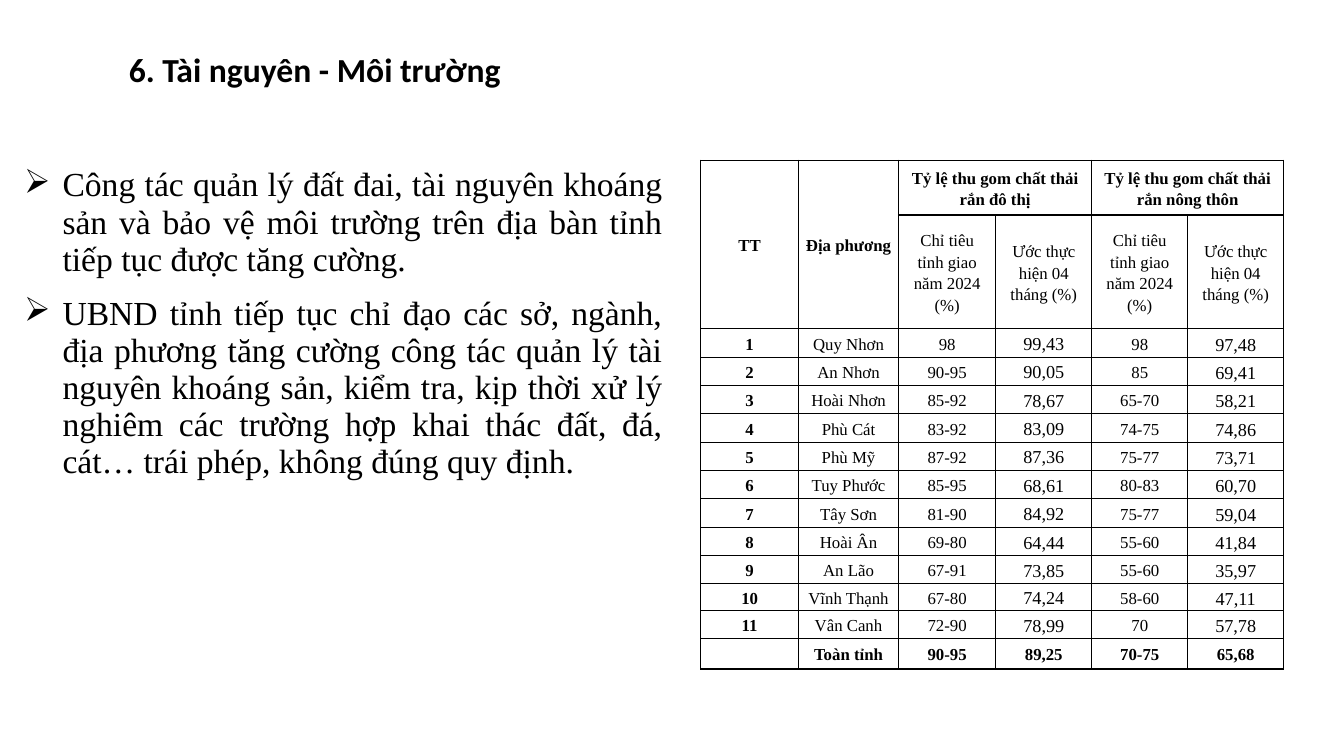
import dataclasses
import typing

import pptx
import pptx.dml.color
import pptx.enum.text
import pptx.oxml
import pptx.oxml.ns
import pptx.util

"""Build the slide on natural resources and the environment."""

HUES = {"ink": "000000", "paper": "FFFFFF"}
WIDE, HIGH = pptx.util.Inches(13.33), pptx.util.Inches(7.5)
SERIF = "Times New Roman"
PLAIN = "{2D5ABB26-0587-4C30-8999-92F81FD0307C}"
ALIGN = pptx.enum.text.PP_ALIGN
MID = pptx.enum.text.MSO_ANCHOR.MIDDLE


@dataclasses.dataclass
class Box:
    left: float
    top: float
    wide: float
    high: float

    def place(self) -> tuple[int, int, int, int]:
        return across(self.left), down(self.top), across(self.wide), down(self.high)


@dataclasses.dataclass
class Grid:
    box: Box
    cols: list[float]
    rows: list[float]


class Place(typing.NamedTuple):
    name: str
    town: str
    town_now: str
    farm: str
    farm_now: str


TITLE = Box(8.85, 5.87, 32.63, 6.67)
NOTES = Grid(Box(1.05, 19.73, 48.99, 53.73), [48.99], [5.47])
RATES = Grid(Box(52.14, 21.2, 43.36, 66.8),
             [7.28, 7.44, 7.24] + [7.14] * 3,
             [7.25, 15.05] + [3.75] * 9 + [3.5] + [3.75] * 2)

POINTS = [
    "Công tác quản lý đất đai, tài nguyên khoáng sản và bảo vệ môi trường "
    "trên địa bàn tỉnh tiếp tục được tăng cường.",
    "UBND tỉnh tiếp tục chỉ đạo các sở, ngành, địa phương tăng cường công tác "
    "quản lý tài nguyên khoáng sản, kiểm tra, kịp thời xử lý nghiêm các trường "
    "hợp khai thác đất, đá, cát… trái phép, không đúng quy định.",
]
HEADS = {
    (0, 0, 1, 0): "TT",
    (0, 1, 1, 1): "Địa phương",
    (0, 2, 0, 3): "Tỷ lệ thu gom chất thải rắn đô thị",
    (0, 4, 0, 5): "Tỷ lệ thu gom chất thải rắn nông thôn",
}
SUBS = ["Chỉ tiêu tỉnh giao năm 2024 (%)", "Ước thực hiện 04 tháng (%)"] * 2
PLACES = [
    Place("Quy Nhơn", "98", "99,43", "98", "97,48"),
    Place("An Nhơn", "90-95", "90,05", "85", "69,41"),
    Place("Hoài Nhơn", "85-92", "78,67", "65-70", "58,21"),
    Place("Phù Cát", "83-92", "83,09", "74-75", "74,86"),
    Place("Phù Mỹ", "87-92", "87,36", "75-77", "73,71"),
    Place("Tuy Phước", "85-95", "68,61", "80-83", "60,70"),
    Place("Tây Sơn", "81-90", "84,92", "75-77", "59,04"),
    Place("Hoài Ân", "69-80", "64,44", "55-60", "41,84"),
    Place("An Lão", "67-91", "73,85", "55-60", "35,97"),
    Place("Vĩnh Thạnh", "67-80", "74,24", "58-60", "47,11"),
    Place("Vân Canh", "72-90", "78,99", "70", "57,78"),
]
TOTAL = Place("Toàn tỉnh", "90-95", "89,25", "70-75", "65,68")


def across(share: float) -> int:
    return round(WIDE * share / 100)


def down(share: float) -> int:
    return round(HIGH * share / 100)


def shade(name: str) -> pptx.dml.color.RGBColor:
    return pptx.dml.color.RGBColor.from_string(HUES[name])


def write(para, text: str, *, size: float = 12, bold: bool = False, font: str = SERIF,
          align=ALIGN.CENTER, line: float | None = None, after: float = 0) -> None:
    para.alignment = align
    para.space_after = pptx.util.Pt(after)
    if line:
        para.line_spacing = line
    run = para.add_run()
    run.text = text
    run.font.size = pptx.util.Pt(size)
    run.font.bold = bold
    run.font.name = font
    run.font.color.rgb = shade("ink")


def mark(para) -> None:
    props = para._p.get_or_add_pPr()
    dent = across(2.85)
    props.set("marL", str(dent))
    props.set("indent", str(-dent))
    props.append(pptx.oxml.parse_xml(
        f'<a:buChar {pptx.oxml.ns.nsdecls("a")} char="➢"/>'))


def frame(cell) -> None:
    props = cell._tc.get_or_add_tcPr()
    for spot, side in enumerate(("lnL", "lnR", "lnT", "lnB")):
        props.insert(spot, pptx.oxml.parse_xml(
            f'<a:{side} {pptx.oxml.ns.nsdecls("a")} w="{pptx.util.Pt(1)}"><a:solidFill>'
            f'<a:srgbClr val="{HUES["ink"]}"/></a:solidFill></a:{side}>'))


def lay(slide, grid: Grid):
    table = slide.shapes.add_table(
        len(grid.rows), len(grid.cols), *grid.box.place()).table
    table.first_row = table.horz_banding = False
    table._tbl.tblPr.find(pptx.oxml.ns.qn("a:tableStyleId")).text = PLAIN
    for col, share in zip(table.columns, grid.cols):
        col.width = across(share)
    for row, share in zip(table.rows, grid.rows):
        row.height = down(share)
    return table


def fill(cell, text: str, **form) -> None:
    cell.vertical_anchor = MID
    write(cell.text_frame.paragraphs[0], text, **{"line": 1.15, "after": 10, **form})


def head(slide) -> None:
    body = slide.shapes.add_textbox(*TITLE.place()).text_frame
    body.word_wrap = True
    body.auto_size = pptx.enum.text.MSO_AUTO_SIZE.SHAPE_TO_FIT_TEXT
    write(body.paragraphs[0], "6. Tài nguyên - Môi trường", size=24, bold=True,
          font="Calibri", align=ALIGN.LEFT)


def notes(slide) -> None:
    cell = lay(slide, NOTES).cell(0, 0)
    cell.vertical_anchor = MID
    body = cell.text_frame
    for at, text in enumerate(POINTS):
        para = body.add_paragraph() if at else body.paragraphs[0]
        write(para, text, size=24, align=ALIGN.JUSTIFY, after=12)
        mark(para)


def rates(slide) -> None:
    table = lay(slide, RATES)
    for cell in table.iter_cells():
        cell.margin_left = cell.margin_right = across(0.53)
        cell.margin_top = cell.margin_bottom = 0
        cell.fill.solid()
        cell.fill.fore_color.rgb = shade("paper")
        frame(cell)
    for (top, left, low, right), text in HEADS.items():
        table.cell(top, left).merge(table.cell(low, right))
        fill(table.cell(top, left), text, bold=True)
    for col, text in enumerate(SUBS, 2):
        fill(table.cell(1, col), text)
    for num, place in enumerate(PLACES, 1):
        fill(table.cell(num + 1, 0), str(num), bold=True)
        for col, text in enumerate(place, 1):
            fill(table.cell(num + 1, col), text, size=13 if col in (3, 5) else 12,
                 line=1.2 if col == 5 else 1.15)
    last = len(RATES.rows) - 1
    for col, text in enumerate(("", *TOTAL)):
        fill(table.cell(last, col), text, bold=True)


def main() -> None:
    deck = pptx.Presentation()
    deck.slide_width, deck.slide_height = WIDE, HIGH
    slide = deck.slides.add_slide(deck.slide_layouts[6])
    head(slide)
    notes(slide)
    rates(slide)
    deck.save("out.pptx")


if __name__ == "__main__":
    main()
